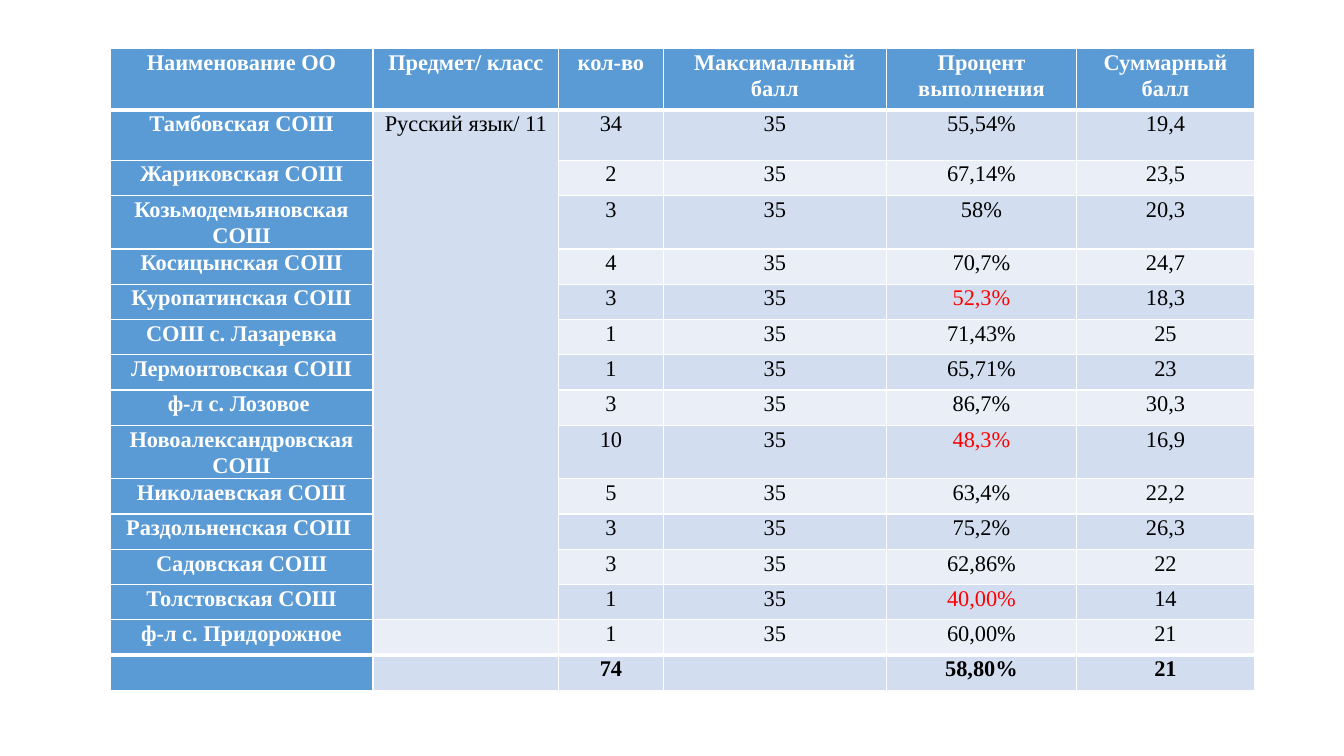
from pptx import Presentation
from pptx.dml.color import RGBColor
from pptx.enum.text import PP_ALIGN
from pptx.oxml.ns import qn
from pptx.util import Inches, Pt
from lxml import etree

CENTER = PP_ALIGN.CENTER
FONT = "Times New Roman"
COLORS = {"head": "5B9BD5", "odd": "D2DEEF", "even": "EAEFF7",
          "white": "FFFFFF", "black": "000000", "low": "FF0000"}

HEADER = ["Наименование ОО", "Предмет/ класс", "кол-во",
          "Максимальный балл", "Процент выполнения", "Суммарный балл"]
SUBJECT = "Русский язык/ 11"
MAX_SCORE = "35"
SCHOOLS = [
    ("Тамбовская СОШ", "34", "55,54%", "19,4"),
    ("Жариковская СОШ", "2", "67,14%", "23,5"),
    ("Козьмодемьяновская СОШ", "3", "58%", "20,3"),
    ("Косицынская СОШ", "4", "70,7%", "24,7"),
    ("Куропатинская СОШ", "3", "52,3%", "18,3"),
    ("СОШ с. Лазаревка", "1", "71,43%", "25"),
    ("Лермонтовская СОШ", "1", "65,71%", "23"),
    ("ф-л с. Лозовое ", "3", "86,7%", "30,3"),
    ("Новоалександровская СОШ", "10", "48,3%", "16,9"),
    ("Николаевская СОШ", "5", "63,4%", "22,2"),
    ("Раздольненская СОШ ", "3", "75,2%", "26,3"),
    ("Садовская СОШ", "3", "62,86%", "22"),
    ("Толстовская СОШ", "1", "40,00%", "14"),
    ("ф-л с. Придорожное", "1", "60,00%", "21"),
]
TOTAL = ["", "", "74", "", "58,80%", "21"]
LOW_SCORES = {"52,3%", "48,3%", "40,00%"}
SUBJECT_ROWS = 13

COL_WIDTHS = [2.61, 1.84, 1.04, 2.21, 1.89, 1.76]
ROW_HEIGHT = 0.35
TALL_ROWS = {0: 0.61, 1: 0.5, 3: 0.53, 9: 0.53}
LEFT, TOP = 1.09, 0.48

rows = [HEADER]
rows += [[name, "", count, MAX_SCORE, percent, score]
         for name, count, percent, score in SCHOOLS]
rows.append(TOTAL)
rows[1][1] = SUBJECT
last = len(rows) - 1
heights = [TALL_ROWS.get(i, ROW_HEIGHT) for i in range(len(rows))]


def rgb(name):
    return RGBColor.from_string(COLORS[name])


def set_borders(cell, row):
    tcPr = cell._tc.get_or_add_tcPr()
    thick = {"lnT": row == last, "lnB": row in (0, last - 1)}
    for i, side in enumerate(("lnL", "lnR", "lnT", "lnB")):
        ln = etree.Element(qn("a:" + side), w=str(Pt(3 if thick.get(side) else 1)))
        fill = etree.SubElement(ln, qn("a:solidFill"))
        etree.SubElement(fill, qn("a:srgbClr"), val=COLORS["white"])
        tcPr.insert(i, ln)


def fill_cell(cell, row, col, text):
    heading = row == 0 or col == 0
    cell.margin_left = cell.margin_right = Inches(0.07)
    cell.margin_top = cell.margin_bottom = 0
    cell.fill.solid()
    cell.fill.fore_color.rgb = rgb("head" if heading else "odd" if row % 2 else "even")
    set_borders(cell, row)
    p = cell.text_frame.paragraphs[0]
    p.alignment = CENTER
    p.line_spacing = 1.07
    p.font.name = FONT
    p.font.size = Pt(16)
    p.font.bold = heading or row == last
    p.font.color.rgb = rgb("white" if heading else "low" if text in LOW_SCORES else "black")
    if text:
        p.add_run().text = text


prs = Presentation()
prs.slide_width, prs.slide_height = Inches(13.33), Inches(7.5)
s = prs.slides.add_slide(prs.slide_layouts[6])
table = s.shapes.add_table(len(rows), len(HEADER), Inches(LEFT), Inches(TOP),
                           Inches(sum(COL_WIDTHS)), Inches(sum(heights))).table
table.horz_banding = False
for column, width in zip(table.columns, COL_WIDTHS):
    column.width = Inches(width)
for table_row, height in zip(table.rows, heights):
    table_row.height = Inches(height)
for i, values in enumerate(rows):
    for j, text in enumerate(values):
        fill_cell(table.cell(i, j), i, j, text)
table.cell(1, 1).merge(table.cell(SUBJECT_ROWS, 1))

prs.save("out.pptx")
